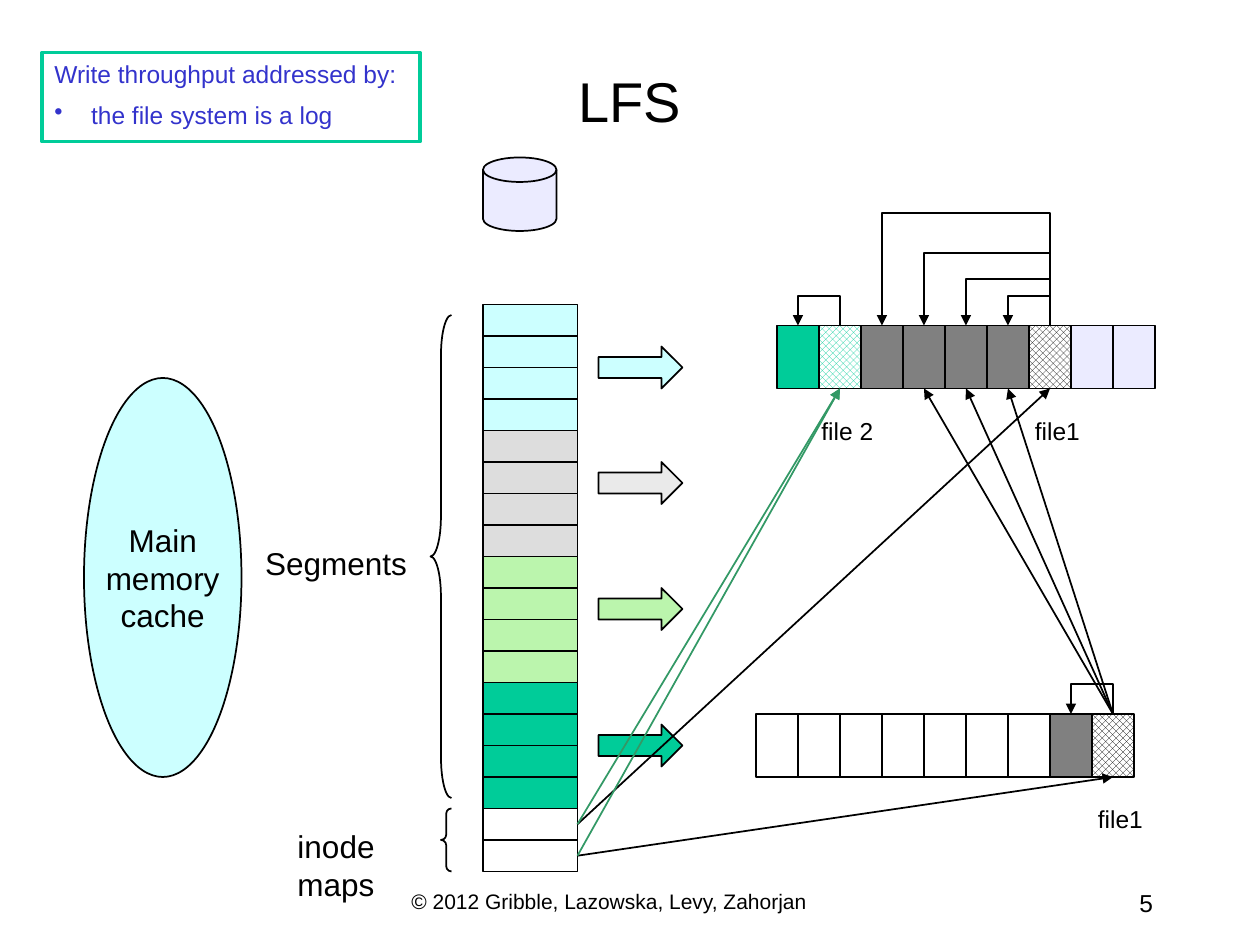
from lxml.etree import SubElement
from pptx import Presentation
from pptx.dml.color import RGBColor
from pptx.enum.dml import MSO_PATTERN
from pptx.enum.shapes import MSO_CONNECTOR, MSO_SHAPE
from pptx.enum.text import MSO_ANCHOR, PP_ALIGN
from pptx.oxml.ns import qn
from pptx.util import Cm, Pt

BLACK, WHITE, GRAY = "000000", "FFFFFF", "808080"
CYAN, SILVER, LIME, GREEN, LILAC = "CCFFFF", "DDDDDD", "BBF5AD", "00CC99", "EBEBFF"
LINK_GREEN, BLUE = "339966", "3333CC"


def grid(count):
    return Cm(count * 2.54 / 12)


def color(value):
    return RGBColor.from_string(value)


def write(frame, text, size=14, ink=BLACK, align=PP_ALIGN.LEFT, anchor=MSO_ANCHOR.TOP,
          wrap=True, before=0, bullet=False, font="Arial", add=False):
    frame.word_wrap = wrap
    frame.vertical_anchor = anchor
    paragraph = frame.add_paragraph() if add else frame.paragraphs[0]
    paragraph.text = text
    paragraph.alignment = align
    paragraph.space_before = Pt(before)
    for run in paragraph.runs:
        run.font.name = font
        run.font.size = Pt(size)
        run.font.color.rgb = color(ink)
    if bullet:
        properties = paragraph._p.get_or_add_pPr()
        properties.set("marL", str(Cm(0.74)))
        properties.set("indent", str(-Cm(0.74)))
        SubElement(properties, qn("a:buChar")).set("char", "•")


class Diagram:
    """Draws styled elements on one slide, measured in twelfths of an inch."""

    def __init__(self, slide, line_width=1):
        self.slide = slide
        self.line_width = line_width

    def text(self, box, text, **style):
        shape = self.slide.shapes.add_textbox(*map(grid, box))
        write(shape.text_frame, text, **style)

    def label(self, center, top, text, **style):
        self.text((center - 8, top, 16, 4), text, align=PP_ALIGN.CENTER, wrap=False, **style)

    def shape(self, kind, box, fill=None, line=BLACK, width=None, pattern=False, adjust=()):
        shape = self.slide.shapes.add_shape(kind, *map(grid, box))
        shape.shadow.inherit = False
        shape.line.color.rgb = color(line)
        shape.line.width = Pt(width or self.line_width)
        if pattern:
            shape.fill.patterned()
            shape.fill.pattern = MSO_PATTERN.LARGE_CHECKER_BOARD
            shape.fill.fore_color.rgb = color(fill)
            shape.fill.back_color.rgb = color(WHITE)
        elif fill:
            shape.fill.solid()
            shape.fill.fore_color.rgb = color(fill)
        else:
            shape.fill.background()
        for index, value in enumerate(adjust):
            shape.adjustments[index] = value
        return shape

    def blocks(self, left, top, cells):
        for index, (fill, pattern) in enumerate(cells):
            self.shape(MSO_SHAPE.RECTANGLE, (left + 4 * index, top, 4, 6), fill, pattern=pattern)

    def arrow(self, start, end, line=BLACK, kind=MSO_CONNECTOR.STRAIGHT):
        connector = self.slide.shapes.add_connector(kind, *map(grid, start + end))
        connector.line.color.rgb = color(line)
        connector.line.width = Pt(self.line_width)
        SubElement(connector.line._get_or_add_ln(), qn("a:tailEnd")).set("type", "triangle")
        SubElement(connector._element.spPr, qn("a:effectLst"))
        return connector

    def loop(self, start, end, base, rise):
        middle, half, thin = (start + end) / 2, (start - end) / 2, 0.01
        connector = self.arrow((middle + thin / 2, base + half), (middle - thin / 2, base - half),
                               kind=MSO_CONNECTOR.ELBOW)
        properties = connector._element.spPr
        properties.find(qn("a:xfrm")).set("rot", "16200000")
        guide = SubElement(properties.find(qn("a:prstGeom")).find(qn("a:avLst")), qn("a:gd"))
        guide.set("name", "adj1")
        guide.set("fmla", f"val {round(-rise / thin * 100000)}")


def main():
    presentation = Presentation()
    presentation.slide_width, presentation.slide_height = grid(120), grid(90)
    slide = presentation.slides.add_slide(presentation.slide_layouts[6])
    diagram = Diagram(slide)

    diagram.text((38, 84, 44, 4), "© 2012 Gribble, Lazowska, Levy, Zahorjan", size=12)
    diagram.text((86, 84, 25, 4), "5", align=PP_ALIGN.RIGHT)
    diagram.text((9, 5, 102, 9), "LFS", size=32, align=PP_ALIGN.CENTER, anchor=MSO_ANCHOR.MIDDLE)

    diagram.shape(MSO_SHAPE.FLOWCHART_MAGNETIC_DISK, (46, 15, 7, 7), LILAC)
    segments = [fill for fill in (CYAN, SILVER, LIME, GREEN) for _ in range(4)]
    for index, fill in enumerate(segments + [None, None]):
        diagram.shape(MSO_SHAPE.RECTANGLE, (46, 29 + 3 * index, 9, 3), fill)
    for top, fill in ((33, CYAN), (44, "EAEAEA"), (56, LIME), (69, GREEN)):
        diagram.shape(MSO_SHAPE.RIGHT_ARROW, (57, top, 8, 4), fill)
    diagram.shape(MSO_SHAPE.LEFT_BRACE, (41, 30, 2, 46), adjust=(1.92, 0.5))
    diagram.shape(MSO_SHAPE.LEFT_BRACE, (42, 77, 1, 6), adjust=(0.5, 0.5))
    diagram.label(32, 51.2, "Segments", size=18, before=1.8)
    diagram.label(32, 78.2, "inode maps", size=18, before=1.8)

    inode = (BLACK, True)
    diagram.blocks(74, 31, [(GREEN, False), (GREEN, True)] + [(GRAY, False)] * 4
                   + [inode] + [(LILAC, False)] * 2)
    diagram.blocks(72, 68, [(None, False)] * 7 + [(GRAY, False), inode])
    for center, top, name in ((80.7, 39, "file 2"), (100.7, 39, "file1"), (106.7, 76, "file1")):
        diagram.label(center, top, name)

    for start, end, base, rise in ((100, 96, 31, 3), (100, 92, 31, 4.7), (100, 88, 31, 7.3),
                                   (100, 84, 31, 11.3), (80, 76, 31, 3), (106, 102, 68, 3)):
        diagram.loop(start, end, base, rise)
    for block in (96, 92, 88):
        diagram.arrow((106, 68), (block, 37))
    for row, target, line in ((78.5, (100, 37), BLACK), (78.5, (80, 37), LINK_GREEN),
                              (81.5, (106, 74), BLACK), (81.5, (80, 37), LINK_GREEN)):
        diagram.arrow((55, row), target, line)

    cache = diagram.shape(MSO_SHAPE.OVAL, (8, 36, 15, 38), CYAN)
    write(cache.text_frame, "Main\nmemory\ncache", size=18, align=PP_ALIGN.CENTER,
          anchor=MSO_ANCHOR.MIDDLE, wrap=False, before=1.8)
    note = diagram.shape(MSO_SHAPE.RECTANGLE, (4, 5, 36, 8.5), line=GREEN, width=2)
    write(note.text_frame, "Write throughput addressed by:", ink=BLUE, before=7)
    write(note.text_frame, "the file system is a log", ink=BLUE, before=7, bullet=True, add=True)

    presentation.save("out.pptx")


if __name__ == "__main__":
    main()
